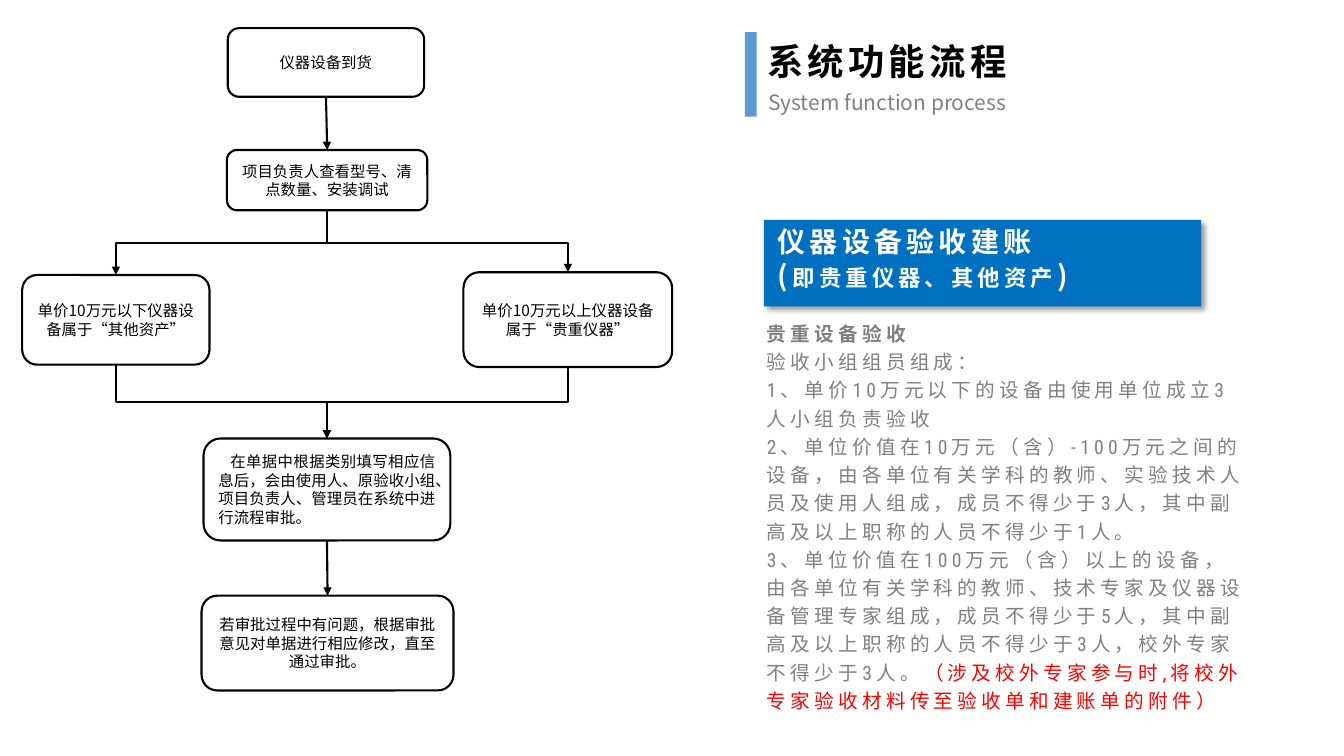
"""Build the slide on the acceptance workflow for instruments and equipment."""
from dataclasses import dataclass

from lxml import etree
from pptx import Presentation
from pptx import util as u
from pptx.dml.color import RGBColor
from pptx.enum import shapes, text
from pptx.oxml.ns import qn

BLACK = RGBColor(0x00, 0x00, 0x00)
WHITE = RGBColor(0xFF, 0xFF, 0xFF)
GREY = RGBColor(0x80, 0x80, 0x80)
RED = RGBColor(0xFF, 0x00, 0x00)
ACCENT = RGBColor(0x5B, 0x9B, 0xD5)
BANNER = RGBColor(0x00, 0x70, 0xC0)

SANS = "Noto Sans CJK SC"
CONDENSED = "Roboto Condensed"
TOP, BOTTOM = 0, 2
SPLIT_Y, MERGE_Y = u.Cm(6.12), u.Cm(10.13)


@dataclass
class Step:
    key: str
    left: float
    top: float
    width: float
    height: float
    label: str
    align: text.PP_ALIGN = text.PP_ALIGN.CENTER
    indent: float = 0


@dataclass
class Style:
    size: float
    color: RGBColor
    bold: bool = False
    tracking: int = 0
    latin: str = SANS


STEPS = [
    Step("arrival", 5.74, 0.71, 4.95, 1.73, "仪器设备到货"),
    Step("check", 5.72, 3.78, 5.05, 1.52, "项目负责人查看型号、清点数量、安装调试"),
    Step("valuable", 11.68, 6.86, 5.26, 2.39, "单价10万元以上仪器设备属于“贵重仪器”"),
    Step("other", 0.56, 6.93, 4.72, 2.26, "单价10万元以下仪器设备属于“其他资产”"),
    Step("approval", 5.13, 11.05, 6.22, 2.57,
         "在单据中根据类别填写相应信息后，会由使用人、原验收小组、项目负责人、管理员在系统中进行流程审批。",
         text.PP_ALIGN.JUSTIFY, 0.3),
    Step("revision", 5.08, 15.01, 6.35, 2.39,
         "若审批过程中有问题，根据审批意见对单据进行相应修改，直至通过审批。"),
]
STRAIGHT_LINKS = [("arrival", "check"), ("approval", "revision")]
BENT_LINKS = [
    ("check", "other", SPLIT_Y),
    ("check", "valuable", SPLIT_Y),
    ("other", "approval", MERGE_Y),
    ("valuable", "approval", MERGE_Y),
]
RULES = [
    "验收小组组员组成：",
    "1、单价10万元以下的设备由使用单位成立3人小组负责验收",
    "2、单位价值在10万元（含）-100万元之间的设备，由各单位有关学科的教师、实验技术人员及使用人组成，"
    "成员不得少于3人，其中副高及以上职称的人员不得少于1人。",
    "3、单位价值在100万元（含）以上的设备，由各单位有关学科的教师、技术专家及仪器设备管理专家组成，"
    "成员不得少于5人，其中副高及以上职称的人员不得少于3人，校外专家不得少于3人。",
]
REMARK = "（涉及校外专家参与时,将校外专家验收材料传至验收单和建账单的附件）"


def style_paragraph(paragraph, style: Style) -> None:
    """Apply a text style to a whole paragraph."""
    font = paragraph.font
    font.size, font.bold, font.name = u.Pt(style.size), style.bold, style.latin
    font.color.rgb = style.color
    if style.tracking:
        font._rPr.set("spc", str(style.tracking * 100))
    etree.SubElement(font._rPr, qn("a:ea"), typeface=SANS)


def write(frame, lines: list[str], styles: list[Style]) -> list:
    """Fill a text frame with one styled paragraph per line."""
    for line, style in zip(lines, styles):
        paragraph = frame.paragraphs[0] if line is lines[0] else frame.add_paragraph()
        if line:
            paragraph.add_run().text = line
        style_paragraph(paragraph, style)
    return list(frame.paragraphs)


def add_text(slide, left: float, top: float, width: float, height: float, wrap: bool = True):
    """Add an empty text box and return its frame."""
    frame = slide.shapes.add_textbox(u.Cm(left), u.Cm(top), u.Cm(width), u.Cm(height)).text_frame
    frame.word_wrap = wrap
    return frame


def add_block(slide, left: float, top: float, width: float, height: float, color: RGBColor):
    """Add a plain filled rectangle."""
    block = slide.shapes.add_shape(shapes.MSO_SHAPE.RECTANGLE, u.Cm(left), u.Cm(top),
                                   u.Cm(width), u.Cm(height))
    block.fill.solid()
    block.fill.fore_color.rgb = color
    block.line.fill.background()
    block.shadow.inherit = False
    return block


def add_step(slide, step: Step):
    """Add one rounded box of the flow chart."""
    box = slide.shapes.add_shape(shapes.MSO_SHAPE.ROUNDED_RECTANGLE, u.Cm(step.left),
                                 u.Cm(step.top), u.Cm(step.width), u.Cm(step.height))
    box.shadow.inherit = False
    box.fill.background()
    box.line.color.rgb, box.line.width = BLACK, u.Pt(1.5)
    frame = box.text_frame
    frame.word_wrap, frame.vertical_anchor = True, text.MSO_ANCHOR.MIDDLE
    paragraph = write(frame, [step.label], [Style(11, BLACK)])[0]
    paragraph.alignment = step.align
    if step.indent:
        paragraph._p.get_or_add_pPr().set("indent", str(u.Cm(step.indent)))
    return box


def add_arrow(slide, source, target, kind: shapes.MSO_CONNECTOR):
    """Join the bottom of one box to the top of another with an arrow."""
    arrow = slide.shapes.add_connector(kind, 0, 0, 0, 0)
    arrow.begin_connect(source, BOTTOM)
    arrow.end_connect(target, TOP)
    arrow.line.color.rgb, arrow.line.width = BLACK, u.Pt(1.5)
    etree.SubElement(arrow.line._get_or_add_ln(), qn("a:tailEnd"), type="triangle")
    etree.SubElement(arrow._element.spPr, qn("a:effectLst"))
    return arrow


def bend(arrow, bar_y: int) -> None:
    """Turn an elbow arrow so that it leaves downwards and crosses at bar_y."""
    x1, y1, x2, y2 = arrow.begin_x, arrow.begin_y, arrow.end_x, arrow.end_y
    drop, reach = y2 - y1, abs(x2 - x1)
    arrow.left, arrow.top = (x1 + x2 - drop) // 2, (y1 + y2 - reach) // 2
    arrow.width, arrow.height = drop, reach
    rightward = x2 > x1
    xfrm = arrow._element.spPr.find(qn("a:xfrm"))
    xfrm.set("rot", str((270 if rightward else 90) * 60000))
    xfrm.set("flipH", "1" if rightward else "0")
    guides = arrow._element.spPr.find(qn("a:prstGeom")).find(qn("a:avLst"))
    share = round((bar_y - y1) / drop * 100000)
    etree.SubElement(guides, qn("a:gd"), name="adj1", fmla=f"val {share}")


def add_flow(slide) -> None:
    """Draw the flow chart."""
    boxes = {step.key: add_step(slide, step) for step in STEPS}
    for source, target in STRAIGHT_LINKS:
        add_arrow(slide, boxes[source], boxes[target], shapes.MSO_CONNECTOR.STRAIGHT)
    for source, target, bar_y in BENT_LINKS:
        bend(add_arrow(slide, boxes[source], boxes[target], shapes.MSO_CONNECTOR.ELBOW), bar_y)


def add_heading(slide) -> None:
    """Place the title, its subtitle and the accent bar."""
    title = slide.shapes.title
    title.left, title.top, title.width, title.height = map(u.Cm, (19.08, 0.86, 13.94, 1.37))
    title.text_frame.vertical_anchor = text.MSO_ANCHOR.MIDDLE
    heading = write(title.text_frame, ["系统功能流程"], [Style(26, BLACK, True, 3)])[0]
    heading.alignment = text.PP_ALIGN.LEFT
    subtitle = add_text(slide, 19.23, 2.18, 6.48, 0.76, wrap=False)
    subtitle.margin_left = subtitle.margin_right = u.Cm(0.13)
    subtitle.margin_top = subtitle.margin_bottom = u.Cm(0.08)
    write(subtitle, ["System function process"], [Style(15, GREY)])
    add_block(slide, 18.77, 0.81, 0.3, 2.13, ACCENT)


def add_banner(slide) -> None:
    """Draw the blue banner with its shadow and two lines of text."""
    banner = add_block(slide, 19.25, 5.54, 11.02, 2.18, BANNER)
    shadow = etree.SubElement(banner._element.spPr.find(qn("a:effectLst")), qn("a:outerShdw"),
                              blurRad=str(u.Pt(4)), dist=str(u.Pt(3)), dir="2700000")
    tone = etree.SubElement(shadow, qn("a:srgbClr"), val="000000")
    etree.SubElement(tone, qn("a:alpha"), val="40000")
    frame = add_text(slide, 19.35, 5.54, 10.92, 1.96)
    scope = write(frame, ["仪器设备验收建账", ""], [Style(20, WHITE, True, 3)] * 2)[1]
    for part in ("(", "即贵重仪器、其他资产", ")"):
        run = scope.add_run()
        run.text = part
        if len(part) > 1:
            run.font.size = u.Pt(16)


def add_rules(slide) -> None:
    """Write the acceptance rules with the closing remark in red."""
    plain = Style(14, GREY, False, 3, CONDENSED)
    strong = Style(14, GREY, True, 3, CONDENSED)
    frame = add_text(slide, 19.08, 7.87, 12.7, 10.31)
    paragraphs = write(frame, ["贵重设备验收", *RULES], [strong] + [plain] * len(RULES))
    for paragraph in paragraphs:
        paragraph.line_spacing = 1.2
    remark = paragraphs[-1].add_run()
    remark.text = REMARK
    remark.font.color.rgb = RED


def main() -> None:
    """Create the presentation and save it."""
    deck = Presentation()
    deck.slide_width, deck.slide_height = u.Cm(33.87), u.Cm(19.05)
    slide = deck.slides.add_slide(deck.slide_layouts[5])
    add_heading(slide)
    add_flow(slide)
    add_banner(slide)
    add_rules(slide)
    deck.save("out.pptx")


if __name__ == "__main__":
    main()
